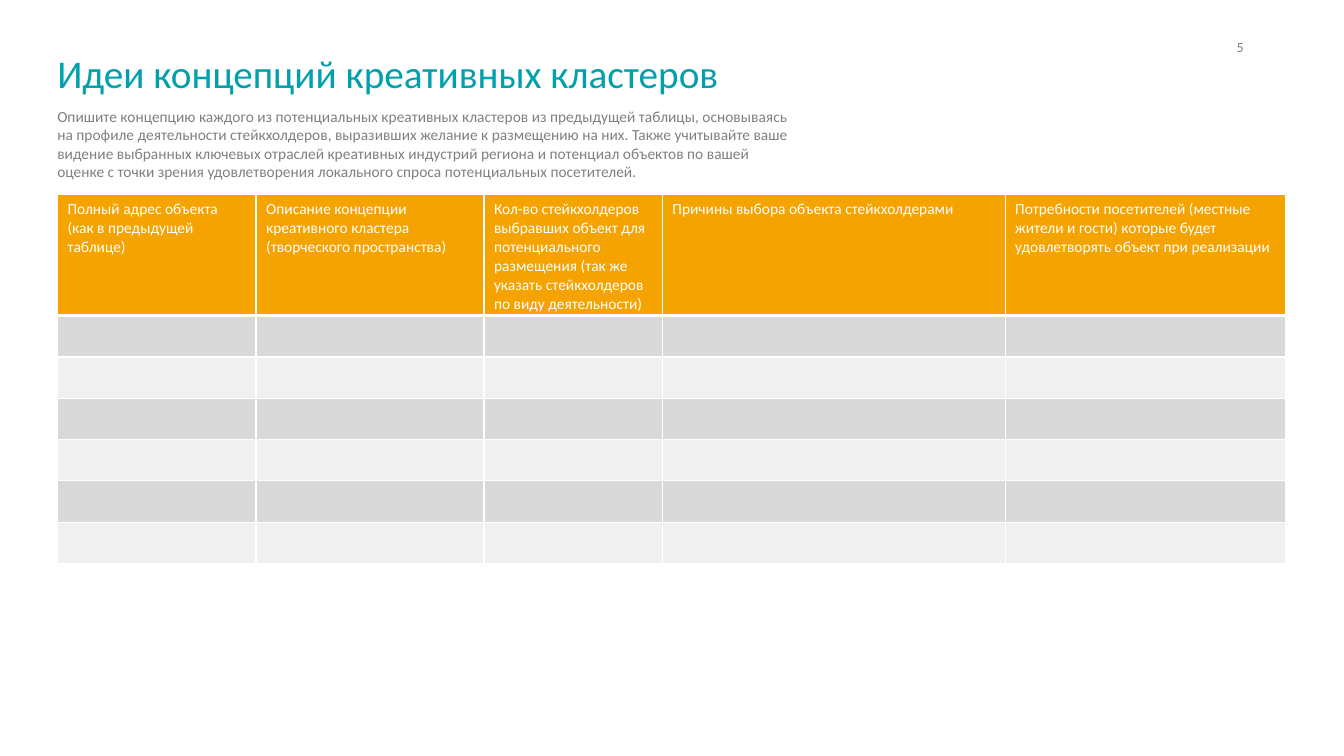
"""Builds the slide with the table of creative cluster concepts."""
from dataclasses import dataclass

from lxml import etree
from pptx import Presentation
from pptx.dml.color import RGBColor
from pptx.enum.text import MSO_ANCHOR, PP_ALIGN
from pptx.oxml.ns import qn
from pptx.util import Inches, Pt

LEFT, CENTER = PP_ALIGN.LEFT, PP_ALIGN.CENTER
MIDDLE = MSO_ANCHOR.MIDDLE

WHITE = RGBColor(0xFF, 0xFF, 0xFF)
TEAL = RGBColor(0x00, 0xA0, 0xAC)
GRAY = RGBColor(0x80, 0x80, 0x80)
ORANGE = RGBColor(0xF4, 0xA3, 0x00)
DARK_BAND = RGBColor(0xD9, 0xD9, 0xD9)
LIGHT_BAND = RGBColor(0xF0, 0xF0, 0xF0)

FONT = "Calibri"
BODY_ROWS = 6
HEADER_HEIGHT = 1.19
BODY_HEIGHT = 0.41
TABLE_LEFT, TABLE_TOP = 0.57, 1.93


@dataclass(frozen=True)
class Caption:
    text: str
    left: float
    top: float
    width: float
    height: float
    size: float
    color: RGBColor
    align: PP_ALIGN = LEFT


@dataclass(frozen=True)
class Column:
    heading: str
    width: float


CAPTIONS = [
    Caption("5", 12.08, 0.33, 0.44, 0.28, 10, GRAY, CENTER),
    Caption("Идеи концепций креативных кластеров", 0.47, 0.44, 7.56, 0.57, 28, TEAL),
    Caption(
        "Опишите концепцию каждого из потенциальных креативных кластеров из предыдущей "
        "таблицы, основываясь на профиле деятельности стейкхолдеров, выразивших желание "
        "к размещению на них. Также учитывайте ваше видение выбранных ключевых отраслей "
        "креативных индустрий региона и потенциал объектов по вашей оценке с точки зрения "
        "удовлетворения локального спроса потенциальных посетителей.",
        0.47, 1.01, 7.56, 1.03, 11, GRAY,
    ),
]

COLUMNS = [
    Column("Полный адрес объекта (как в предыдущей таблице)", 1.97),
    Column("Описание концепции креативного кластера\n(творческого пространства)", 2.26),
    Column(
        "Кол-во стейкхолдеров выбравших объект для потенциального размещения "
        "(так же указать стейкхолдеров по виду деятельности)",
        1.77,
    ),
    Column("Причины выбора объекта стейкхолдерами", 3.4),
    Column(
        "Потребности посетителей (местные жители и гости) которые будет "
        "удовлетворять объект при реализации",
        2.78,
    ),
]


def write_text(frame, text: str, size: float, color: RGBColor, align: PP_ALIGN = LEFT) -> None:
    frame.text = text
    for paragraph in frame.paragraphs:
        paragraph.alignment = align
        paragraph.font.name = FONT
        paragraph.font.size = Pt(size)
        paragraph.font.color.rgb = color


def draw_caption(slide, caption: Caption) -> None:
    box = slide.shapes.add_textbox(
        Inches(caption.left), Inches(caption.top), Inches(caption.width), Inches(caption.height)
    )
    box.text_frame.word_wrap = True
    if caption.align == CENTER:
        box.text_frame.vertical_anchor = MIDDLE
    write_text(box.text_frame, caption.text, caption.size, caption.color, caption.align)


def paint_cell(cell, color: RGBColor, top: float, bottom: float) -> None:
    properties = cell._tc.get_or_add_tcPr()
    for side, width in (("L", 1), ("R", 1), ("T", top), ("B", bottom)):
        border = etree.SubElement(properties, qn(f"a:ln{side}"), w=str(Pt(width)))
        paint = etree.SubElement(border, qn("a:solidFill"))
        etree.SubElement(paint, qn("a:srgbClr"), val=str(WHITE))
    cell.fill.solid()
    cell.fill.fore_color.rgb = color


def draw_concepts(slide, columns: list[Column]) -> None:
    concepts = slide.shapes.add_table(
        BODY_ROWS + 1,
        len(columns),
        Inches(TABLE_LEFT),
        Inches(TABLE_TOP),
        Inches(sum(column.width for column in columns)),
        Inches(HEADER_HEIGHT + BODY_ROWS * BODY_HEIGHT),
    ).table
    for index, row in enumerate(concepts.rows):
        row.height = Inches(BODY_HEIGHT if index else HEADER_HEIGHT)
    for index, column in enumerate(columns):
        concepts.columns[index].width = Inches(column.width)
        heading = concepts.cell(0, index)
        write_text(heading.text_frame, column.heading, 11, WHITE)
        paint_cell(heading, ORANGE, 1, 3)
        for row in range(1, BODY_ROWS + 1):
            band = DARK_BAND if row % 2 else LIGHT_BAND
            paint_cell(concepts.cell(row, index), band, 3 if row == 1 else 1, 1)


def main() -> None:
    deck = Presentation()
    deck.slide_width, deck.slide_height = Inches(13.33), Inches(7.5)
    slide = deck.slides.add_slide(deck.slide_layouts[6])
    for caption in CAPTIONS:
        draw_caption(slide, caption)
    draw_concepts(slide, COLUMNS)
    deck.save("out.pptx")


if __name__ == "__main__":
    main()
